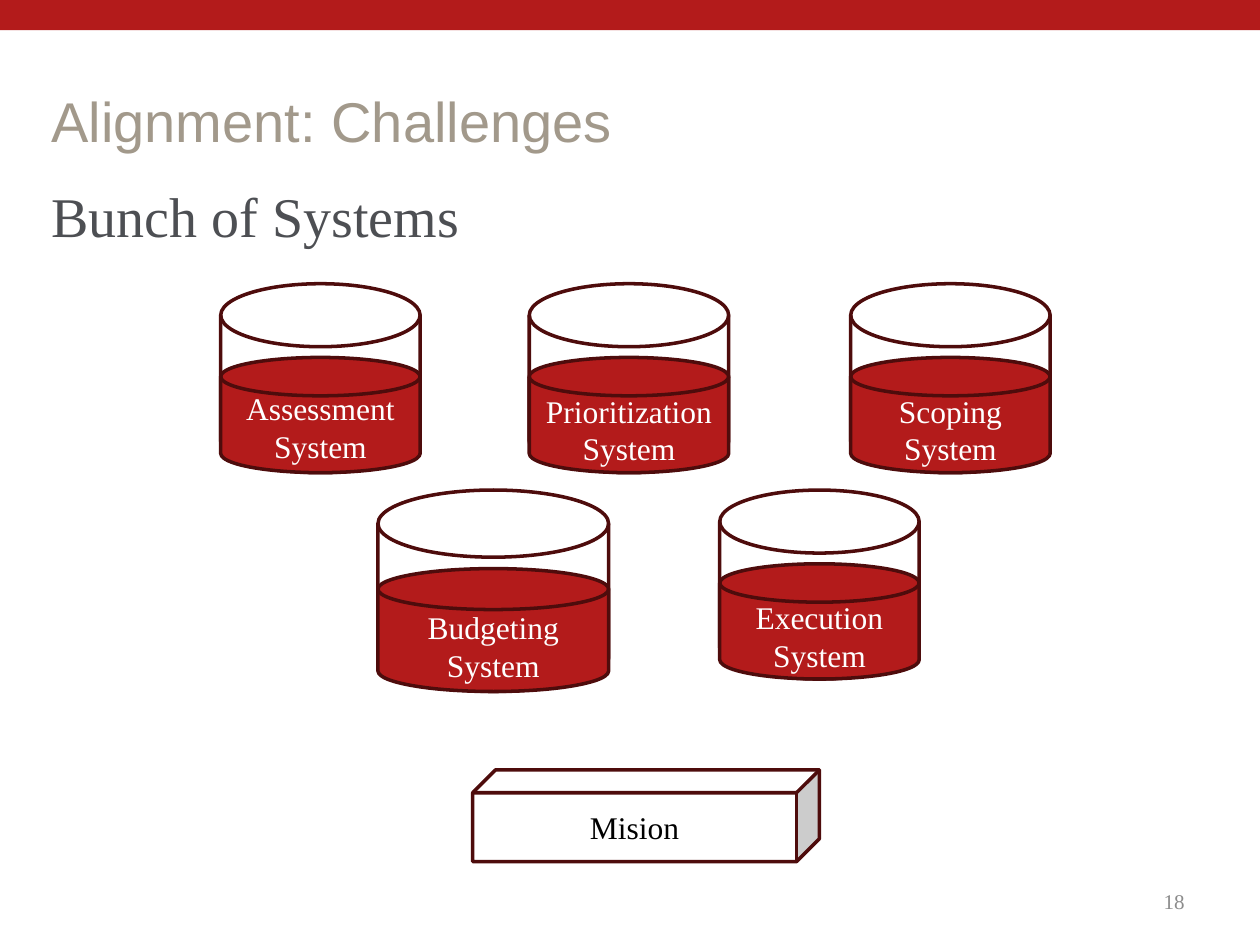
from pptx import Presentation
from pptx.dml.color import RGBColor
from pptx.enum.shapes import MSO_SHAPE
from pptx.enum.text import MSO_ANCHOR, PP_ALIGN
from pptx.util import Cm, Pt

RECTANGLE = MSO_SHAPE.RECTANGLE
DISK = MSO_SHAPE.FLOWCHART_MAGNETIC_DISK
CUBE = MSO_SHAPE.CUBE
TOP, MIDDLE = MSO_ANCHOR.TOP, MSO_ANCHOR.MIDDLE
LEFT, CENTER, RIGHT = PP_ALIGN.LEFT, PP_ALIGN.CENTER, PP_ALIGN.RIGHT

SERIF, SANS = "Times New Roman", "Arial"
RED, DARK_RED, WHITE, BLACK = "B31B1B", "4E0C0C", "FFFFFF", "000000"
TAUPE, SLATE, GRAY = "A2998B", "4D4F53", "8C8C8C"

LABEL_WIDTH, LABEL_HEIGHT = 4.02, 1.8
LIQUID_SHARE = 0.61
SYSTEMS = [
    ("Assessment System", 4.45, 5.72, 4.02, 3.81, 7.72),
    ("Prioritization\nSystem", 10.67, 5.72, 4.02, 3.81, 7.77),
    ("Scoping\nSystem", 17.15, 5.72, 4.02, 3.81, 7.77),
    ("Budgeting\nSystem", 7.62, 9.88, 4.65, 4.06, 12.14),
    ("Execution\nSystem", 14.51, 9.88, 4.02, 3.81, 11.94),
]


def color(value):
    return RGBColor.from_string(value)


def write(shape, text, size, ink, font=SERIF, align=LEFT, anchor=TOP):
    frame = shape.text_frame
    frame.word_wrap = True
    frame.vertical_anchor = anchor
    frame.text = text
    for para in frame.paragraphs:
        para.alignment = align
        for span in para.runs:
            span.font.name = font
            span.font.size = Pt(size)
            span.font.color.rgb = color(ink)


def add_text(page, place, text, size, ink, **style):
    box = page.shapes.add_textbox(*map(Cm, place))
    write(box, text, size, ink, **style)


def add_solid(shapes, kind, place, fill, line=None):
    solid = shapes.add_shape(kind, *map(Cm, place))
    solid.shadow.inherit = False
    solid.fill.solid()
    solid.fill.fore_color.rgb = color(fill)
    if line:
        solid.line.color.rgb = color(line)
        solid.line.width = Pt(2)
    else:
        solid.line.fill.background()
    return solid


def add_tank(page, left, top, width, height):
    liquid = height * LIQUID_SHARE
    tank = page.shapes.add_group_shape()
    add_solid(tank.shapes, DISK, (left, top, width, height), WHITE, DARK_RED)
    add_solid(tank.shapes, DISK, (left, top + height - liquid, width, liquid),
              RED, DARK_RED)


def add_system(page, name, left, top, width, height, label_top):
    add_tank(page, left, top, width, height)
    label_left = left + (width - LABEL_WIDTH) / 2
    add_text(page, (label_left, label_top, LABEL_WIDTH, LABEL_HEIGHT),
             name, 18, WHITE, align=CENTER)


def main():
    deck = Presentation()
    deck.slide_width, deck.slide_height = Cm(25.4), Cm(19.05)
    page = deck.slides.add_slide(deck.slide_layouts[6])

    add_solid(page.shapes, RECTANGLE, (0, 0, 25.4, 0.61), RED)
    add_text(page, (0.79, 1.47, 24.1, 1.9), "Alignment: Challenges", 32, TAUPE,
             font=SANS, anchor=MIDDLE)
    add_text(page, (0.79, 3.54, 24.1, 1.8), "Bunch of Systems", 32, SLATE)

    for system in SYSTEMS:
        add_system(page, *system)

    mission = add_solid(page.shapes, CUBE, (9.53, 15.52, 6.99, 1.85),
                        WHITE, DARK_RED)
    write(mission, "Mision", 18, BLACK, align=CENTER, anchor=MIDDLE)
    add_text(page, (18.21, 17.65, 5.92, 1.02), "18", 12, GRAY,
             align=RIGHT, anchor=MIDDLE)

    deck.save("out.pptx")


if __name__ == "__main__":
    main()
